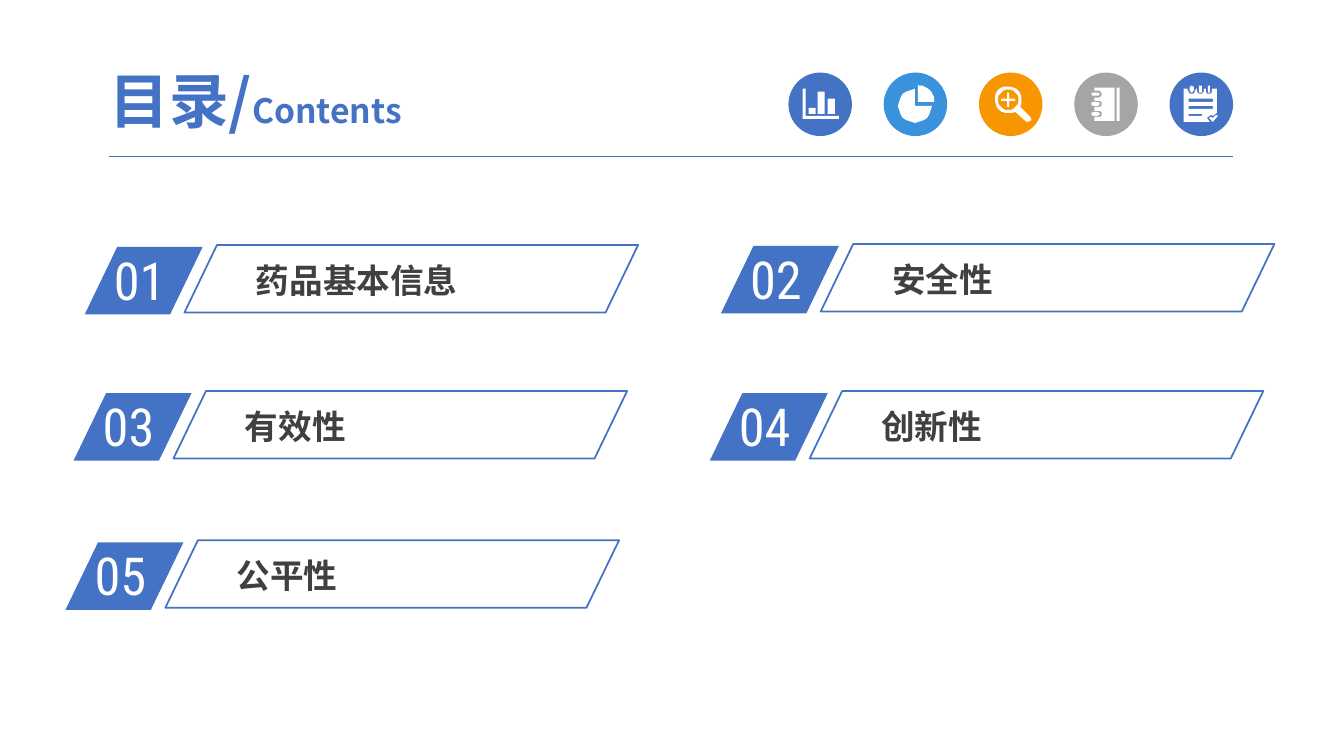
from dataclasses import dataclass
from math import cos, radians, sin

from lxml import etree
from pptx import Presentation
from pptx.dml.color import RGBColor
from pptx.enum.shapes import MSO_CONNECTOR, MSO_SHAPE
from pptx.enum.text import MSO_ANCHOR, PP_ALIGN
from pptx.oxml.ns import qn
from pptx.util import Inches, Pt

STRAIGHT = MSO_CONNECTOR.STRAIGHT
OVAL, SLANTED = MSO_SHAPE.OVAL, MSO_SHAPE.PARALLELOGRAM
LEFT, CENTER = PP_ALIGN.LEFT, PP_ALIGN.CENTER
TOP, MIDDLE = MSO_ANCHOR.TOP, MSO_ANCHOR.MIDDLE


@dataclass(frozen=True)
class Theme:
    blue: str = "4472C4"
    sky: str = "3992DB"
    orange: str = "F79600"
    gray: str = "A5A5A5"
    ink: str = "404040"
    white: str = "FFFFFF"
    heading_font: str = "Noto Sans CJK SC"
    number_font: str = "Roboto Condensed"
    title_size: float = 42.6
    number_size: float = 37.4
    label_size: float = 24
    rule_width: float = 0.5
    frame_width: float = 1.25


class SlideBuilder:
    def __init__(self, page, theme):
        self.page = page
        self.theme = theme

    def paint(self, shape, fill=None, line=None):
        shape.shadow.inherit = False
        if fill:
            shape.fill.solid()
            shape.fill.fore_color.rgb = RGBColor.from_string(fill)
        else:
            shape.fill.background()
        if line:
            shape.line.color.rgb = RGBColor.from_string(line)
            shape.line.width = Pt(self.theme.frame_width)
        else:
            shape.line.fill.background()

    def shape(self, kind, left, top, width, height, fill=None, line=None):
        shape = self.page.shapes.add_shape(
            kind, Inches(left), Inches(top), Inches(width), Inches(height))
        self.paint(shape, fill, line)
        return shape

    def slanted(self, left, top, width, height, fill=None, line=None):
        shape = self.shape(SLANTED, left, top, width, height, fill, line)
        shape.adjustments[0] = 0.482

    def text(self, left, top, width, height, spans, font, color,
             bold=False, align=LEFT, anchor=TOP):
        """Add one paragraph made of (text, size) spans."""
        box = self.page.shapes.add_textbox(
            Inches(left), Inches(top), Inches(width), Inches(height))
        frame = box.text_frame
        frame.word_wrap = True
        frame.vertical_anchor = anchor
        para = frame.paragraphs[0]
        para.alignment = align
        for words, size in spans:
            span = para.add_run()
            span.text = words
            span.font.name = font
            span.font.size = Pt(size)
            span.font.bold = bold
            span.font.color.rgb = RGBColor.from_string(color)
            east_asian = etree.SubElement(span.font._element, qn("a:ea"))
            east_asian.set("typeface", font)

    def rule(self, left, top, right):
        line = self.page.shapes.add_connector(
            STRAIGHT, Inches(left), Inches(top), Inches(right), Inches(top))
        line.line.color.rgb = RGBColor.from_string(self.theme.blue)
        line.line.width = Pt(self.theme.rule_width)
        etree.SubElement(line._element.spPr, qn("a:effectLst"))

    def icon(self, left, top, color, contours):
        """Add a disc with a white glyph; contours are in hundredths of an inch."""
        self.shape(OVAL, left, top, 0.63, 0.63, fill=color)
        first, *others = contours
        builder = self.page.shapes.build_freeform(
            *first[0], scale=Inches(0.01))
        builder.add_line_segments(first[1:], close=True)
        for contour in others:
            builder.move_to(*contour[0])
            builder.add_line_segments(contour[1:], close=True)
        glyph = builder.convert_to_shape(Inches(left), Inches(top))
        self.paint(glyph, fill=self.theme.white)

    def entry(self, number, label, left, top):
        theme = self.theme
        self.slanted(left, top, 1.17, 0.67, fill=theme.blue)
        self.text(left + 0.19, top - 0.04, 1.12, 0.73,
                  [(number, theme.number_size)], theme.number_font, theme.white)
        self.text(left + 1.6, top + 0.08, 3.3, 0.5,
                  [(label, theme.label_size)], theme.heading_font, theme.ink,
                  bold=True)
        self.slanted(left + 0.99, top - 0.02, 4.5, 0.67, line=theme.blue)


def arc(x, y, radius, start, end, steps=24):
    """Points along a circle; degrees run clockwise from the right."""
    angles = [radians(start + (end - start) * i / steps)
              for i in range(steps + 1)]
    return [(x + radius * cos(a), y + radius * sin(a)) for a in angles]


def rounded(left, top, width, height, radius):
    right, bottom = left + width - radius, top + height - radius
    left, top = left + radius, top + radius
    corners = [(right, bottom), (left, bottom), (left, top), (right, top)]
    return [point for i, (x, y) in enumerate(corners)
            for point in arc(x, y, radius, 90 * i, 90 * i + 90, 6)]


def bar_glyph():
    axes = [(14, 16), (17, 16), (17, 43), (50, 43), (50, 46), (14, 46)]
    bars = [(20, 35), (29, 19), (39, 26)]
    return [axes] + [rounded(x, y, 7, 41 - y, 1.5) for x, y in bars]


def pie_glyph():
    return [[(34, 29)] + arc(34, 29, 16.5, -90, 0),
            [(31, 33)] + arc(31, 33, 16.5, 0, 270)]


def magnifier_glyph():
    handle = [(50, 43), (52, 46), (51, 48.5), (48.5, 49), (46, 48)]
    x, y, arm, half = 29, 27, 7.5, 1.5
    plus = [(-half, -arm), (half, -arm), (half, -half), (arm, -half),
            (arm, half), (half, half), (half, arm), (-half, arm),
            (-half, half), (-arm, half), (-arm, -half), (-half, -half)]
    return [arc(x, y, 13.5, 60, 390) + handle, arc(x, y, 10, 0, 360),
            [(x + dx, y + dy) for dx, dy in plus]]


def notebook_glyph():
    rings = (41, 31, 21.5)
    cover = [(20, 15), (40, 15), (40, 48), (20, 48)]
    for y in rings:
        cover += [(20, y + 3.5), *arc(23.5, y, 3.5, 90, -90), (20, y - 3.5)]
    return ([cover, rounded(42, 15, 3, 33, 1)]
            + [rounded(17, y - 1.75, 8, 3.5, 1.75) for y in rings])


def checklist_glyph():
    rings = (22, 30.5, 39)
    sheet = [(14, 16)]
    for x in rings:
        sheet += [(x - 3.5, 16), *arc(x, 17.5, 3.5, 180, 0), (x + 3.5, 16)]
    sheet += [(47, 16), (47, 40), (43, 43), (41, 42), (37, 45), (40, 49),
              (14, 49)]
    check = [(39, 45), (41, 43.5), (43, 45), (46, 41.5), (48.5, 43), (43, 49)]
    lines = [(26, 24, 3), (33, 24, 3.5), (41, 13, 2)]
    return ([sheet, check]
            + [rounded(x - 1.5, 13, 3, 7, 1.5) for x in rings]
            + [rounded(19, y, width, height, 1) for y, width, height in lines])


def main():
    theme = Theme()
    deck = Presentation()
    deck.slide_width, deck.slide_height = Inches(13.33), Inches(7.5)
    slide = SlideBuilder(deck.slides.add_slide(deck.slide_layouts[6]), theme)

    slide.text(0.89, 0.63, 3.29, 0.72,
               [("目录/", theme.title_size), ("Contents", theme.label_size)],
               theme.heading_font, theme.blue, bold=True,
               align=CENTER, anchor=MIDDLE)
    slide.rule(1.08, 1.55, 12.23)

    icons = [(theme.blue, bar_glyph()), (theme.sky, pie_glyph()),
             (theme.orange, magnifier_glyph()), (theme.gray, notebook_glyph()),
             (theme.blue, checklist_glyph())]
    for i, (color, contours) in enumerate(icons):
        slide.icon(7.82 + 0.945 * i, 0.72, color, contours)

    entries = [("药品基本信息", 0.84, 2.45), ("安全性", 7.15, 2.44),
               ("有效性", 0.73, 3.9), ("创新性", 7.04, 3.9),
               ("公平性", 0.65, 5.38)]
    for i, (label, left, top) in enumerate(entries, start=1):
        slide.entry(f"{i:02}", label, left, top)

    deck.save("out.pptx")


if __name__ == "__main__":
    main()
